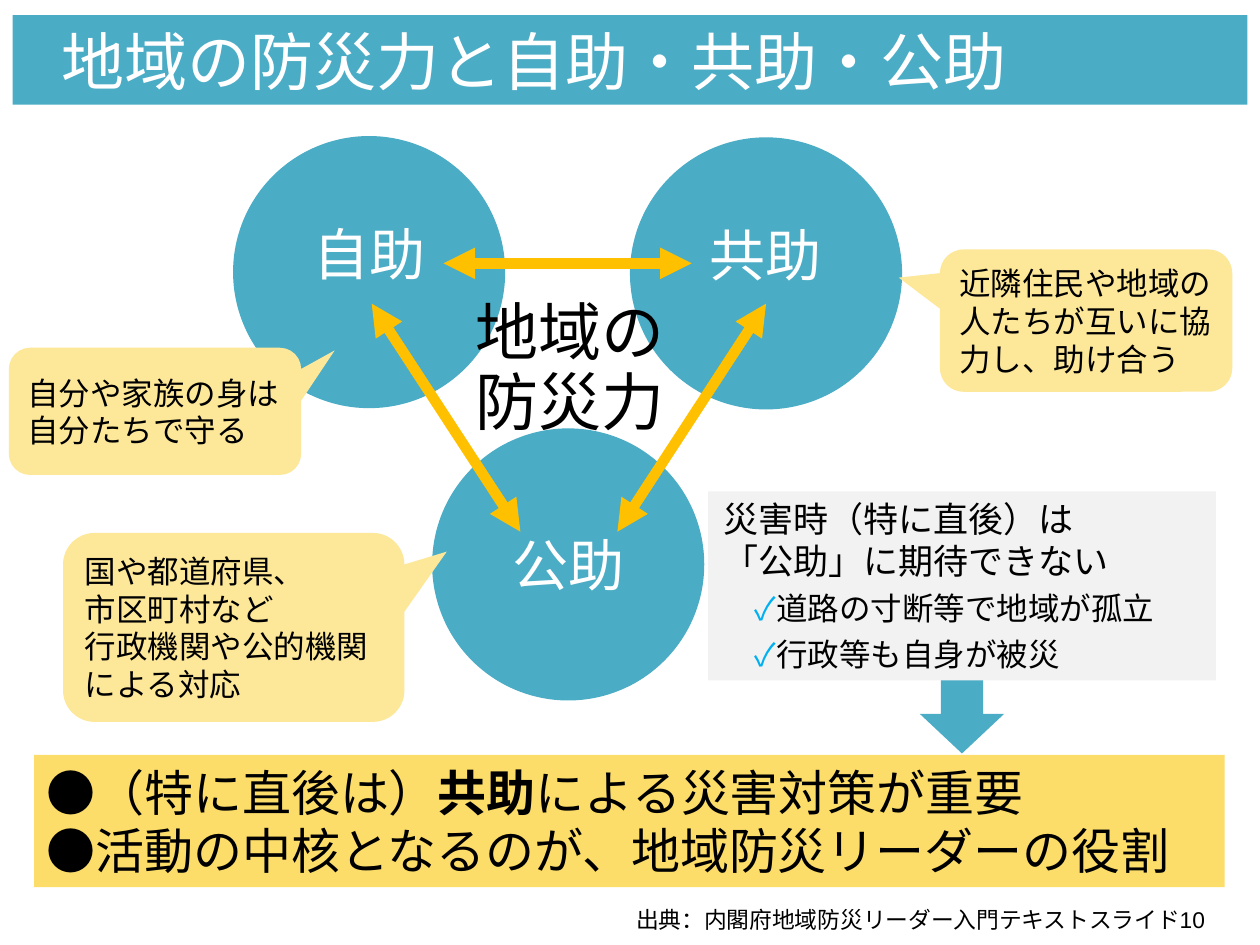
from lxml import etree
from pptx import Presentation
from pptx.dml.color import RGBColor
from pptx.enum.shapes import MSO_CONNECTOR, MSO_SHAPE
from pptx.enum.text import MSO_ANCHOR, MSO_AUTO_SIZE, PP_ALIGN
from pptx.oxml.ns import qn
from pptx.util import Inches, Pt

STRAIGHT = MSO_CONNECTOR.STRAIGHT
OVAL, RECTANGLE = MSO_SHAPE.OVAL, MSO_SHAPE.RECTANGLE
CALLOUT, DOWN_ARROW = MSO_SHAPE.ROUNDED_RECTANGULAR_CALLOUT, MSO_SHAPE.DOWN_ARROW
TOP, MIDDLE = MSO_ANCHOR.TOP, MSO_ANCHOR.MIDDLE
LEFT, CENTER = PP_ALIGN.LEFT, PP_ALIGN.CENTER
NO_AUTOFIT = MSO_AUTO_SIZE.NONE

TEAL, ORANGE, CREAM, YELLOW = "4BACC6", "FFC000", "FDE899", "FCDD6A"
GRAY, SKY, WHITE, BLACK = "F2F2F2", "00B0F0", "FFFFFF", "000000"
JAPANESE = "Noto Sans CJK JP"

presentation = Presentation()
presentation.slide_width, presentation.slide_height = Inches(10), Inches(7.5)
slide = presentation.slides.add_slide(presentation.slide_layouts[5])


def add_filled_shape(kind, box, color, adjustments=()):
    shape = slide.shapes.add_shape(kind, *map(Inches, box))
    shape.shadow.inherit = False
    shape.fill.solid()
    shape.fill.fore_color.rgb = RGBColor.from_string(color)
    shape.line.fill.background()
    for index, value in enumerate(adjustments):
        shape.adjustments[index] = value
    return shape


def write(shape, paragraphs, size, font, color=BLACK, align=LEFT, anchor=MIDDLE):
    """Fill a shape with paragraphs, each a list of (text, overrides) runs."""
    frame = shape.text_frame
    frame.word_wrap = True
    frame.auto_size = NO_AUTOFIT
    frame.vertical_anchor = anchor
    for index, runs in enumerate(paragraphs):
        paragraph = frame.paragraphs[0] if index == 0 else frame.add_paragraph()
        paragraph.alignment = align
        for text, overrides in runs:
            run = paragraph.add_run()
            run.text = text
            run.font.size = Pt(overrides.get("size", size))
            run.font.name = overrides.get("font", font)
            run.font.bold = overrides.get("bold", False)
            run.font.color.rgb = RGBColor.from_string(overrides.get("color", color))
    return frame


# Title bar
title = slide.shapes.title
title.left, title.top, title.width, title.height = map(Inches, (0.1, 0.12, 9.8, 0.71))
title.fill.solid()
title.fill.fore_color.rgb = RGBColor.from_string(TEAL)
title_frame = write(title, [[("地域の防災力と自助・共助・公助", {})]], 36, "Arial", WHITE)
title_frame.margin_left = Inches(0.39)

# Three kinds of help
circle_size = 2.16
for label, left, top, bottom_margin in [
    ("自助", 1.85, 1.08, 0.35),
    ("共助", 5.0, 1.09, 0.35),
    ("公助", 3.43, 3.4, 0.05),
]:
    circle = add_filled_shape(OVAL, (left, top, circle_size, circle_size), TEAL)
    frame = write(circle, [[(label, {})]], 32, JAPANESE, WHITE, CENTER)
    frame.margin_bottom = Inches(bottom_margin)

# Two-way arrows between the circles
for start_x, start_y, end_x, end_y in [
    (3.52, 2.09, 5.49, 2.09),
    (4.9, 4.22, 6.08, 2.41),
    (4.13, 4.22, 2.95, 2.41),
]:
    arrow = slide.shapes.add_connector(
        STRAIGHT, Inches(start_x), Inches(start_y), Inches(end_x), Inches(end_y))
    arrow.line.color.rgb = RGBColor.from_string(ORANGE)
    arrow.line.width = Pt(6)
    line = arrow.line._get_or_add_ln()
    for end in ("a:headEnd", "a:tailEnd"):
        etree.SubElement(line, qn(end), type="triangle")
    etree.SubElement(arrow._element.spPr, qn("a:effectLst"))

center_label = slide.shapes.add_textbox(*map(Inches, (3.52, 2.32, 2.01, 1.22)))
center_frame = write(center_label, [[("地域の", {})], [("防災力", {})]],
                     36, JAPANESE, align=CENTER, anchor=TOP)
for paragraph in center_frame.paragraphs:
    paragraph.line_spacing = Pt(40)

# Explanations of each kind of help
for box, pointer, lines in [
    ((0.07, 2.76, 2.32, 1.01), (0.615, -0.479), ["自分や家族の身は自分たちで守る"]),
    ((0.5, 4.23, 2.71, 1.5), (0.624, -0.401),
     ["国や都道府県、", "市区町村など", "行政機関や公的機関による対応"]),
    ((7.46, 1.98, 2.32, 1.13), (-0.641, -0.302),
     ["近隣住民や地域の人たちが互いに協力し、助け合う"]),
]:
    callout = add_filled_shape(CALLOUT, box, CREAM, (*pointer, 0.167))
    write(callout, [[(text, {})] for text in lines], 18, "Arial")

# Limits of public help, leading down to the conclusion
add_filled_shape(DOWN_ARROW, (7.3, 5.34, 0.67, 0.64), TEAL, (0.5, 0.491))
limits = add_filled_shape(RECTANGLE, (5.62, 3.9, 4.03, 1.5), GRAY)
check = ("✓", {"size": 18, "color": SKY})
limits_frame = write(limits, [
    [("災害時（特に直後）は", {})],
    [("「公助」に期待できない", {})],
    [check, ("道路の寸断等で地域が孤立", {"size": 18})],
    [check, ("行政等も自身が被災", {"size": 18})],
], 20, "Arial", anchor=TOP)
limits_frame.margin_left = limits_frame.margin_right = Inches(0.12)
for paragraph in limits_frame.paragraphs[2:]:
    paragraph.line_spacing = Pt(26)
    paragraph._p.get_or_add_pPr().set("marL", str(Inches(0.25)))

conclusion = add_filled_shape(RECTANGLE, (0.27, 5.99, 9.45, 1.05), YELLOW)
write(conclusion, [
    [("●（特に直後は）", {}), ("共助", {"bold": True}), ("による災害対策が重要", {})],
    [("●活動の中核となるのが、地域防災リーダーの役割", {})],
], 28, "Calibri")

source = slide.shapes.add_textbox(*map(Inches, (4.95, 7.14, 5.02, 0.32)))
write(source, [[("出典：内閣府地域防災リーダー入門テキストスライド", {}),
                ("10", {"font": "Arial"})]], 13, "Calibri", anchor=TOP)

presentation.save("out.pptx")
